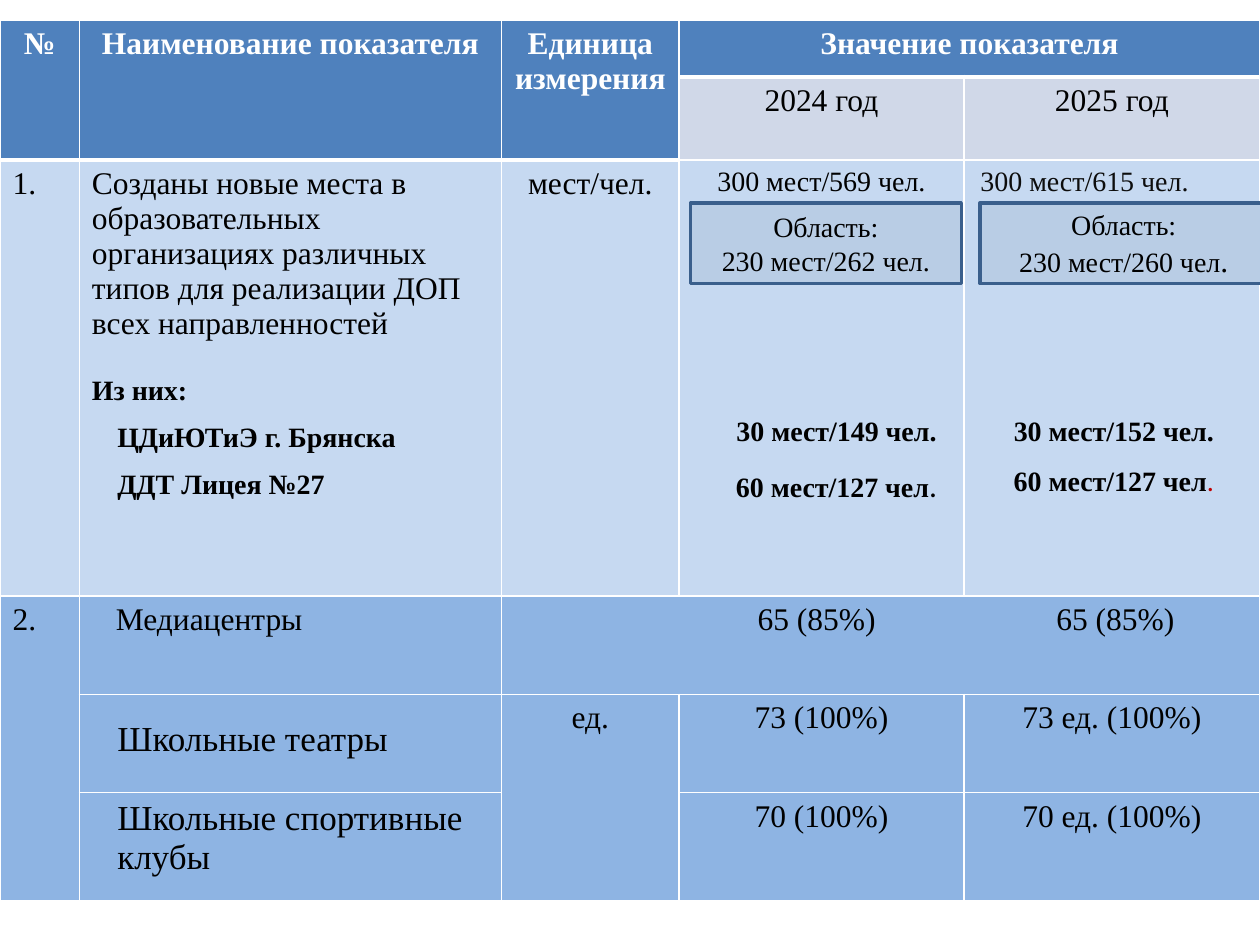
from lxml import etree
from pptx import Presentation
from pptx import util as u
from pptx.dml.color import RGBColor
from pptx.enum import shapes, text
from pptx.oxml.ns import qn

WHITE = RGBColor(0xFF, 0xFF, 0xFF)
BLACK = RGBColor(0x00, 0x00, 0x00)
DARK_GREY = RGBColor(0x0D, 0x0D, 0x0D)
RED = RGBColor(0xC0, 0x00, 0x00)
HEADER = RGBColor(0x4F, 0x81, 0xBD)
YEAR = RGBColor(0xD0, 0xD8, 0xE8)
PLACES = RGBColor(0xC6, 0xD9, 0xF1)
CENTRES = RGBColor(0x8E, 0xB4, 0xE3)
REGION = RGBColor(0xB9, 0xCD, 0xE5)
REGION_LINE = RGBColor(0x3A, 0x5F, 0x8C)

LEFT, CENTER = text.PP_ALIGN.LEFT, text.PP_ALIGN.CENTER
COLUMNS = [1.6, 8.51, 3.58, 5.74, 5.97]
ROWS = [1.14, 1.68, 8.79, 1.98, 1.98, 2.18]
ROW_FILLS = [HEADER, YEAR, PLACES, CENTRES, CENTRES, CENTRES]
MERGES = [(0, 0, 1, 0), (0, 1, 1, 1), (0, 2, 1, 2), (0, 3, 0, 4),
          (3, 0, 5, 0), (3, 2, 3, 4), (4, 2, 5, 2)]


def add_run(paragraph, content, size=18, bold=False, colour=BLACK, font="Times New Roman"):
    """Append a formatted run to a paragraph."""
    run = paragraph.add_run()
    run.text = content
    run.font.size = u.Pt(size)
    run.font.bold = bold
    run.font.name = font
    run.font.color.rgb = colour


def add_text(frame, content, align=CENTER, indent=0, spacing=1.0, before=0, tabs=(), **font):
    """Write a paragraph into the frame, using its empty first one if there is one."""
    paragraph = frame.paragraphs[-1]
    if paragraph.runs:
        paragraph = frame.add_paragraph()
    paragraph.alignment = align
    paragraph.line_spacing = spacing
    paragraph.space_before = u.Pt(before)
    properties = paragraph._p.get_or_add_pPr()
    if indent:
        properties.set("marL", str(u.Cm(indent)))
        properties.set("indent", "0")
    if tabs:
        tab_list = etree.SubElement(properties, qn("a:tabLst"))
        for position in tabs:
            etree.SubElement(tab_list, qn("a:tab"), pos=str(u.Cm(position)), algn="ctr")
    add_run(paragraph, content, **font)
    return paragraph


def style_cell(cell, colour, top, bottom):
    """Give a cell white borders and a solid fill."""
    properties = cell._tc.get_or_add_tcPr()
    for tag, width in (("lnL", 1), ("lnR", 1), ("lnT", top), ("lnB", bottom)):
        line = etree.SubElement(properties, qn(f"a:{tag}"), w=str(u.Pt(width)))
        fill = etree.SubElement(line, qn("a:solidFill"))
        etree.SubElement(fill, qn("a:srgbClr"), val=str(WHITE))
    cell.fill.solid()
    cell.fill.fore_color.rgb = colour


def add_table(slide):
    """Add the styled and merged indicator table without text."""
    frame = slide.shapes.add_table(len(ROWS), len(COLUMNS), u.Cm(0), u.Cm(0.41),
                                   u.Cm(sum(COLUMNS)), u.Cm(sum(ROWS)))
    table = frame.table
    for column, width in zip(table.columns, COLUMNS):
        column.width = u.Cm(width)
    for row, height in zip(table.rows, ROWS):
        row.height = u.Cm(height)
    for row, colour in enumerate(ROW_FILLS):
        for column in range(len(COLUMNS)):
            is_title = column < 3
            heavy_top = row == (2 if is_title else 1)
            heavy_bottom = row == 0 or (row == 1 and is_title)
            style_cell(table.cell(row, column), HEADER if row == 1 and is_title else colour,
                       3 if heavy_top else 1, 3 if heavy_bottom else 1)
    for top, left, bottom, right in MERGES:
        table.cell(top, left).merge(table.cell(bottom, right))
    return table


def fill_table(table):
    """Write the headings, indicators and values into the table."""
    def write(row, column, content, **options):
        """Write a paragraph into one cell."""
        add_text(table.cell(row, column).text_frame, content, **options)

    headings = ["№", "Наименование показателя", "Единица измерения", "Значение показателя"]
    for column, heading in enumerate(headings):
        write(0, column, heading, bold=True, colour=WHITE)
    for column, year in ((3, 2024), (4, 2025)):
        write(1, column, f"{year} год")

    write(2, 0, "1.", align=LEFT)
    write(2, 1, "Созданы новые места в образовательных", align=LEFT)
    write(2, 1, "организациях различных типов для реализации ДОП всех направленностей", align=LEFT)
    write(2, 1, "Из них:", align=LEFT, before=20, size=16, bold=True)
    for name in ("ЦДиЮТиЭ г. Брянска", "ДДТ Лицея №27"):
        write(2, 1, name, align=LEFT, indent=0.51, spacing=1.5, size=16, bold=True)
    write(2, 2, "мест/чел.")
    write(2, 3, "300 мест/569 чел.", size=16)
    write(2, 4, "300 мест/615 чел.", align=LEFT, indent=0.08, size=16, colour=DARK_GREY)

    write(3, 0, "2.", align=LEFT)
    write(3, 1, "Медиацентры", align=LEFT, indent=0.48)
    write(3, 2, "\t65 (85%)\t65 (85%)", align=LEFT, tabs=(6.1, 12.12))
    write(4, 1, "Школьные театры", align=LEFT, indent=0.51, spacing=1.5, size=20)
    write(4, 2, "ед.")
    write(5, 1, "Школьные спортивные клубы", align=LEFT, indent=0.51, size=20)
    for row, count in ((4, 73), (5, 70)):
        write(row, 3, f"{count} (100%)")
        write(row, 4, f"{count} ед. (100%)")


def add_region_box(slide, left, width, value, dot_size):
    """Add a framed box with the regional figures."""
    box = slide.shapes.add_shape(shapes.MSO_SHAPE.RECTANGLE, u.Cm(left), u.Cm(4.09),
                                 u.Cm(width), u.Cm(1.63))
    box.shadow.inherit = False
    box.fill.solid()
    box.fill.fore_color.rgb = REGION
    box.line.color.rgb = REGION_LINE
    box.line.width = u.Pt(2)
    box.text_frame.vertical_anchor = text.MSO_ANCHOR.MIDDLE
    add_text(box.text_frame, "Область:", size=16)
    add_run(add_text(box.text_frame, value, size=16), ".", size=dot_size)


def add_school_values(slide, left, height, first, second, **dot):
    """Add a text box with the values of the two institutions."""
    box = slide.shapes.add_textbox(u.Cm(left), u.Cm(7.87), u.Cm(5.59), u.Cm(height))
    frame = box.text_frame
    frame.word_wrap = True
    add_text(frame, first, spacing=1.5, size=16, bold=True)
    paragraph = add_text(frame, second, spacing=1.5, size=16, bold=True)
    add_run(paragraph, ".", font="Calibri", **dot)


def main():
    """Build the slide and save the presentation."""
    presentation = Presentation()
    presentation.slide_width = u.Cm(25.4)
    presentation.slide_height = u.Cm(19.05)
    slide = presentation.slides.add_slide(presentation.slide_layouts[6])
    fill_table(add_table(slide))
    add_region_box(slide, 13.92, 5.46, "230 мест/262 чел", 16)
    add_region_box(slide, 19.76, 5.79, "230 мест/260 чел", 18)
    add_school_values(slide, 14.07, 2.31, "30 мест/149 чел.", "60 мест/127 чел", size=18)
    add_school_values(slide, 19.66, 2.21, "30 мест/152 чел.", "60 мест/127 чел",
                      size=16, colour=RED)
    presentation.save("out.pptx")


if __name__ == "__main__":
    main()
